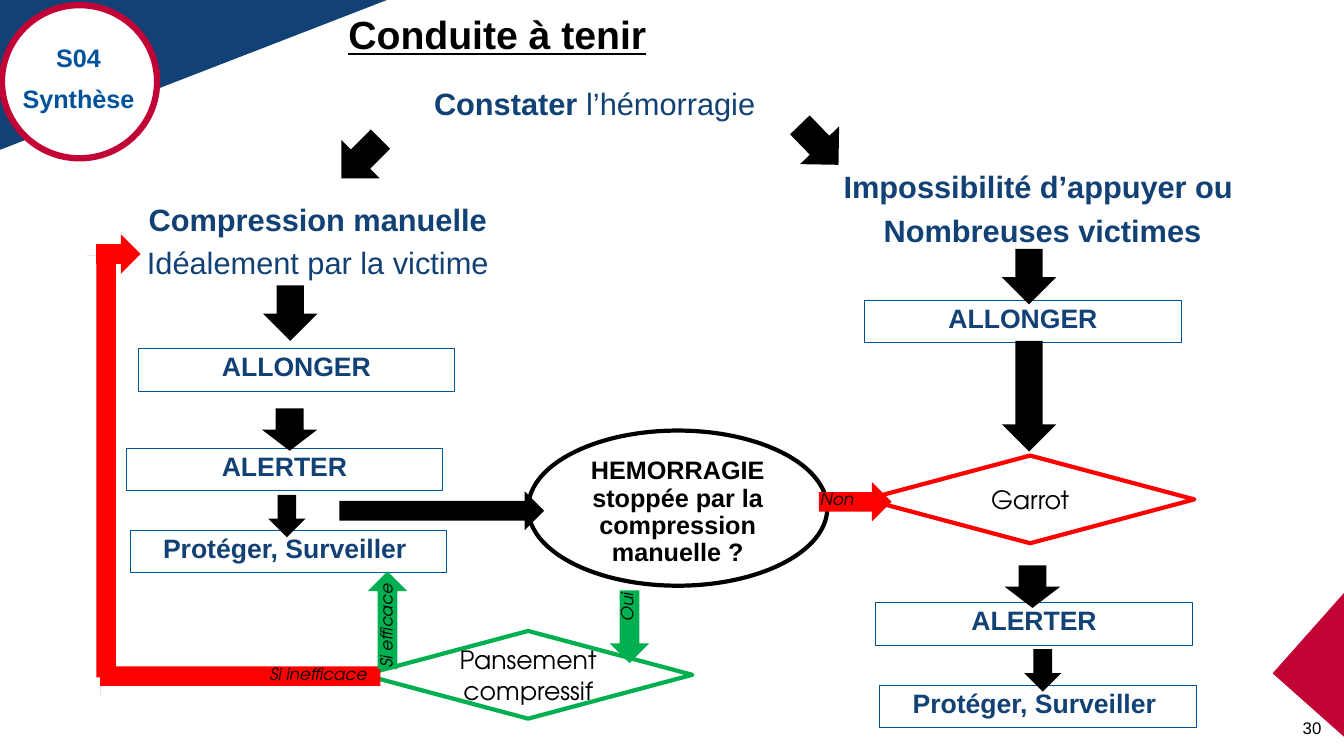
from dataclasses import dataclass

from pptx import Presentation
from pptx.dml.color import RGBColor
from pptx.enum.shapes import MSO_SHAPE
from pptx.enum.text import MSO_ANCHOR, PP_ALIGN
from pptx.shapes.autoshape import Shape
from pptx.slide import Slide
from pptx.util import Cm, Pt

NAVY = RGBColor(0x11, 0x41, 0x75)
BLUE = RGBColor(0x00, 0x52, 0x9B)
CRIMSON = RGBColor(0xC1, 0x04, 0x35)
RED = RGBColor(0xFF, 0x00, 0x00)
GREEN = RGBColor(0x00, 0xB0, 0x50)
BLACK = RGBColor(0x00, 0x00, 0x00)
WHITE = RGBColor(0xFF, 0xFF, 0xFF)

BODY_FONT = "Arial"
FLOW_FONT = "TeX Gyre Adventor"
STEP_WIDTH, STEP_HEIGHT = 7.98, 1.07


@dataclass(frozen=True)
class Area:
    """Place and size in centimetres, rotation in degrees."""
    left: float
    top: float
    width: float
    height: float
    rotation: float = 0


@dataclass(frozen=True)
class Run:
    text: str
    bold: bool = False
    italic: bool = False
    underline: bool = False


@dataclass(frozen=True)
class Style:
    size: float
    color: RGBColor
    font: str = BODY_FONT
    align: PP_ALIGN = PP_ALIGN.CENTER
    spacing: float = 0.9
    anchor: MSO_ANCHOR = MSO_ANCHOR.TOP


@dataclass(frozen=True)
class Arrow:
    area: Area
    color: RGBColor = BLACK
    headless: bool = False


@dataclass(frozen=True)
class Step:
    text: str
    left: float
    top: float


@dataclass(frozen=True)
class Caption:
    area: Area
    style: Style
    lines: list[list[Run]]


BADGE = Style(18, BLUE)
TITLE = Style(28, BLACK, align=PP_ALIGN.LEFT)
FINDING = Style(22, NAVY, align=PP_ALIGN.LEFT)
BRANCH = Style(22, NAVY, spacing=0.8)
STEP = Style(19, NAVY)
QUESTION = Style(18, BLACK)
DECISION = Style(18, BLACK, FLOW_FONT, spacing=1, anchor=MSO_ANCHOR.MIDDLE)
LABEL = Style(12, BLACK, FLOW_FONT, PP_ALIGN.LEFT, 1)
NUMBER = Style(12, BLACK, align=PP_ALIGN.RIGHT, spacing=1, anchor=MSO_ANCHOR.MIDDLE)

CAPTIONS = [
    Caption(Area(0, 1.02, 3.96, 2.21), BADGE,
            [[Run("S04", bold=True)], [Run("Synthèse", bold=True)]]),
    Caption(Area(31.47, 17.81, 2.08, 1.07), NUMBER, [[Run("30")]]),
    Caption(Area(8.53, 0.28, 19.15, 1.57), TITLE,
            [[Run("Conduite à tenir", bold=True, underline=True)]]),
    Caption(Area(10.69, 2.11, 9.35, 1.27), FINDING,
            [[Run("Constater", bold=True), Run(" l’hémorragie")]]),
    Caption(Area(20.7, 4.29, 11.15, 2.11), BRANCH,
            [[Run("Impossibilité d’appuyer ou ", bold=True)],
             [Run("Nombreuses victimes", bold=True)]]),
    Caption(Area(1.85, 5.11, 12.32, 2.11), BRANCH,
            [[Run("Compression manuelle", bold=True)],
             [Run("Idéalement par la victime")]]),
]

STEPS = [
    Step("ALLONGER", 3.48, 8.79),
    Step("ALERTER", 3.18, 11.3),
    Step("Protéger, Surveiller ", 3.28, 13.36),
    Step("ALLONGER", 21.79, 7.57),
    Step("ALERTER", 22.07, 15.19),
    Step("Protéger, Surveiller ", 22.17, 17.27),
]

ARROWS = [
    # From the finding to both branches
    Arrow(Area(8.41, 3.3, 1.37, 1.4, 45)),
    Arrow(Area(19.96, 2.95, 1.37, 1.4, 316)),
    # Left branch
    Arrow(Area(6.63, 7.19, 1.37, 1.4)),
    Arrow(Area(6.6, 10.29, 1.4, 1.07)),
    Arrow(Area(6.76, 12.47, 0.94, 1.07)),
    Arrow(Area(10.64, 10.29, 0.99, 5.16, 270)),
    # Right branch
    Arrow(Area(25.25, 6.27, 1.37, 1.4)),
    Arrow(Area(25.25, 8.59, 1.37, 2.79)),
    Arrow(Area(25.32, 14.25, 1.4, 1.07)),
    Arrow(Area(25.81, 16.36, 0.94, 1.07)),
    # Answers to the question
    Arrow(Area(15.37, 14.88, 0.99, 1.83), GREEN),
    Arrow(Area(21.06, 11.73, 0.99, 1.83, 270), RED),
    # Outcome of the dressing
    Arrow(Area(2.49, 5.84, 0.99, 1.12, 270), RED),
    Arrow(Area(2.18, 6.43, 0.99, 10.64, 180), RED, headless=True),
    Arrow(Area(5.56, 13.51, 0.99, 7.06, 90), RED, headless=True),
    Arrow(Area(9.27, 14.4, 0.99, 2.46, 180), GREEN),
]

LABELS = [
    ("Si inefficace", Area(6.55, 16.61, 6.5, 0.76)),
    ("Oui", Area(14.88, 14.61, 1.83, 0.76, 270)),
    ("Si efficace", Area(8.36, 15.32, 2.74, 0.76, 270)),
    ("Non", Area(20.42, 12.19, 1.83, 0.76)),
]


def write(shape: Shape, style: Style, lines: list[list[Run]]) -> None:
    frame = shape.text_frame
    frame.word_wrap = True
    frame.vertical_anchor = style.anchor
    for index, runs in enumerate(lines):
        paragraph = frame.add_paragraph() if index else frame.paragraphs[0]
        paragraph.alignment = style.align
        paragraph.line_spacing = style.spacing
        paragraph.space_before = Pt(10 if index else 0)
        for item in runs:
            run = paragraph.add_run()
            run.text = item.text
            font = run.font
            font.name, font.size = style.font, Pt(style.size)
            font.bold, font.italic, font.underline = item.bold, item.italic, item.underline
            font.color.rgb = style.color


def add_figure(slide: Slide, kind: MSO_SHAPE, area: Area, fill: RGBColor | None = None,
               line: RGBColor | None = None, weight: float = 0) -> Shape:
    shape = slide.shapes.add_shape(
        kind, Cm(area.left), Cm(area.top), Cm(area.width), Cm(area.height))
    shape.rotation = area.rotation
    shape.shadow.inherit = False
    if fill is None:
        shape.fill.background()
    else:
        shape.fill.solid()
        shape.fill.fore_color.rgb = fill
    if line is None:
        shape.line.fill.background()
    else:
        shape.line.color.rgb = line
        shape.line.width = Pt(weight)
    return shape


def add_caption(slide: Slide, caption: Caption) -> None:
    area = caption.area
    box = slide.shapes.add_textbox(
        Cm(area.left), Cm(area.top), Cm(area.width), Cm(area.height))
    box.rotation = area.rotation
    write(box, caption.style, caption.lines)


def add_arrow(slide: Slide, arrow: Arrow) -> None:
    shape = add_figure(slide, MSO_SHAPE.DOWN_ARROW, arrow.area, arrow.color)
    if arrow.headless:
        shape.adjustments[1] = 0


def main() -> None:
    presentation = Presentation()
    presentation.slide_width, presentation.slide_height = Cm(33.87), Cm(19.05)
    slide = presentation.slides.add_slide(presentation.slide_layouts[6])

    # Corner decoration and badge
    add_figure(slide, MSO_SHAPE.RIGHT_TRIANGLE, Area(2.97, -3.33, 4.01, 10.36, 90), NAVY)
    add_figure(slide, MSO_SHAPE.OVAL, Area(0.05, 0.13, 3.91, 3.86), WHITE, CRIMSON, 4.5)
    add_figure(slide, MSO_SHAPE.RIGHT_TRIANGLE, Area(32.69, 15.34, 2.44, 2.79, 41.6), CRIMSON)

    # Headings and step boxes
    for caption in CAPTIONS:
        add_caption(slide, caption)
    for step in STEPS:
        area = Area(step.left, step.top, STEP_WIDTH, STEP_HEIGHT)
        box = add_figure(slide, MSO_SHAPE.RECTANGLE, area, line=BLUE, weight=0.75)
        write(box, STEP, [[Run(step.text, bold=True)]])

    # Question and decisions
    question = add_figure(slide, MSO_SHAPE.OVAL, Area(13.31, 10.85, 7.54, 3.91),
                          line=BLACK, weight=3)
    write(question, QUESTION,
          [[Run("HEMORRAGIE stoppée par la compression manuelle ?", bold=True)]])
    for text, left, top, color in (("Garrot", 21.82, 11.48, RED),
                                   ("Pansement compressif", 9.17, 15.9, GREEN)):
        diamond = add_figure(slide, MSO_SHAPE.DIAMOND, Area(left, top, 8.28, 2.21),
                             line=color, weight=3)
        write(diamond, DECISION, [[Run(text)]])

    # Arrows and their labels
    for arrow in ARROWS:
        add_arrow(slide, arrow)
    for text, area in LABELS:
        add_caption(slide, Caption(area, LABEL, [[Run(text, italic=True)]]))

    presentation.save("out.pptx")


if __name__ == "__main__":
    main()
